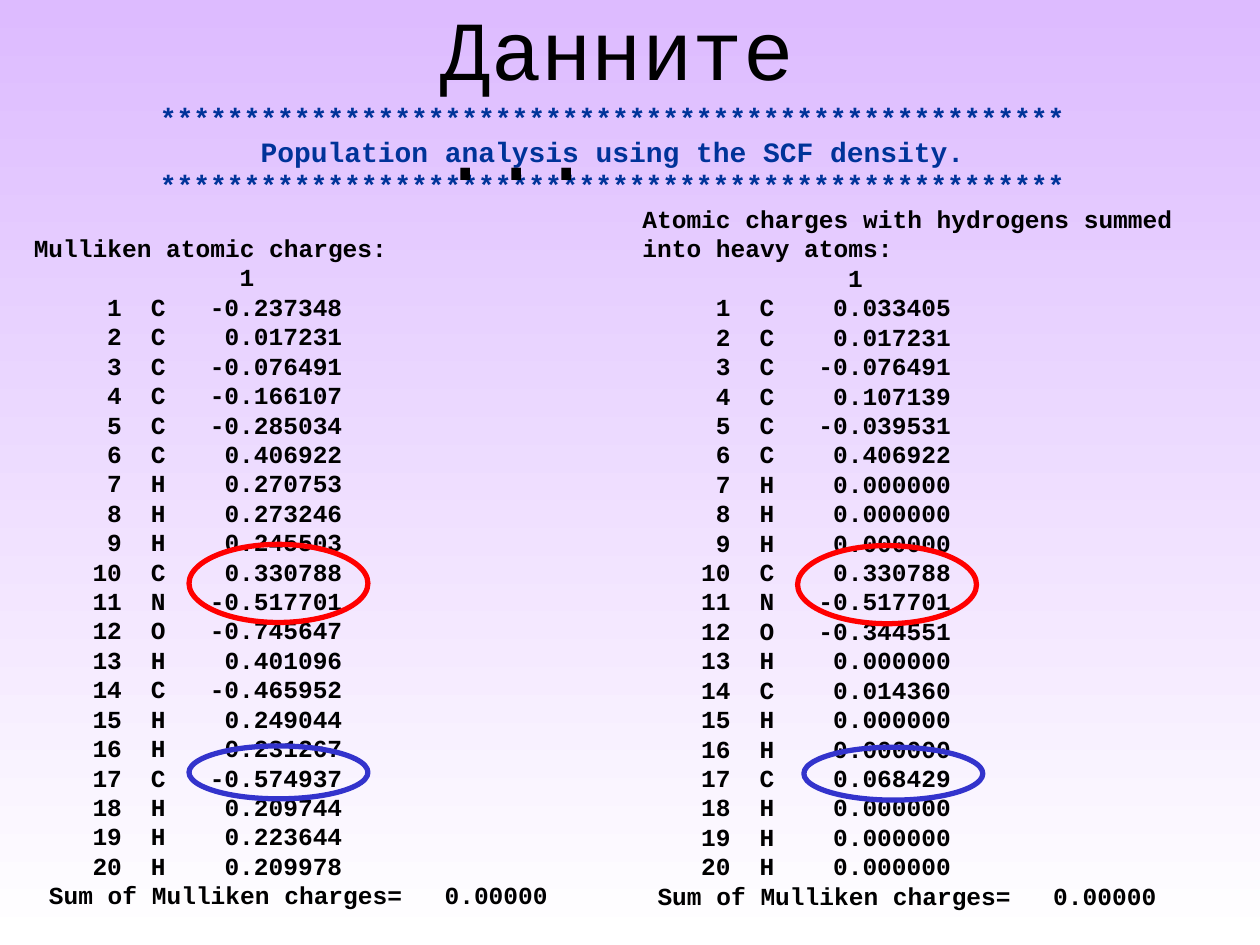
import pptx
import pptx.util
import pptx.dml.color
import pptx.enum.shapes
import pptx.enum.text
import lxml.etree
from pptx.util import Inches, Pt

COLORS = {"top": "DDBBFF", "bottom": "FFFFFF", "heading": "003399",
          "text": "000000", "red": "FF0000", "blue": "3333CC"}
FONT = "Courier New"
LINE_SPACING = 1.2

# Tab stops (alignment, inches) for each kind of output line
HEADING_TABS = [("l", 0.8)]
COLUMN_TABS = [("r", 1.75)]
ATOM_TABS = [("r", 0.7), ("l", 0.93), ("r", 2.45)]
SUM_TABS = [("l", 0.12), ("r", 4.08)]

ATOMS = "CCCCCCHHHCNOHCHHCHHH"
MULLIKEN = """-0.237348 0.017231 -0.076491 -0.166107 -0.285034 0.406922 0.270753
    0.273246 0.245503 0.330788 -0.517701 -0.745647 0.401096 -0.465952 0.249044
    0.231267 -0.574937 0.209744 0.223644 0.209978""".split()
SUMMED = """0.033405 0.017231 -0.076491 0.107139 -0.039531 0.406922 0.000000
    0.000000 0.000000 0.330788 -0.517701 -0.344551 0.000000 0.014360 0.000000
    0.000000 0.068429 0.000000 0.000000 0.000000""".split()


def rgb(name):
    return pptx.dml.color.RGBColor.from_string(COLORS[name])


class SlideBuilder:
    def __init__(self, prs):
        self.s = prs.slides.add_slide(prs.slide_layouts[6])

    def background(self, top, bottom):
        fill = self.s.background.fill
        fill.gradient()
        fill.gradient_angle = 270
        for stop, name, position in zip(fill.gradient_stops, (top, bottom), (0, 1)):
            stop.color.rgb = rgb(name)
            stop.position = position

    def text(self, box, lines, size, color="text", bold=False):
        """Add a text box; lines holds (text, tab stops) pairs."""
        tf = self.s.shapes.add_textbox(*map(Inches, box)).text_frame
        tf.word_wrap = True
        tf.auto_size = pptx.enum.text.MSO_AUTO_SIZE.SHAPE_TO_FIT_TEXT
        for i, (text, tabs) in enumerate(lines):
            p = tf.add_paragraph() if i else tf.paragraphs[0]
            p.text = text
            p.line_spacing = Pt(size * LINE_SPACING)
            self.tab_stops(p, tabs)
            for r in p.runs:
                r.font.name = FONT
                r.font.size = Pt(size)
                r.font.bold = bold
                r.font.color.rgb = rgb(color)

    def tab_stops(self, p, tabs):
        if not tabs:
            return
        ns = pptx.oxml.ns.qn
        tab_list = lxml.etree.SubElement(p._p.get_or_add_pPr(), ns("a:tabLst"))
        for align, position in tabs:
            lxml.etree.SubElement(tab_list, ns("a:tab"),
                                  pos=str(Inches(position)), algn=align)

    def charges(self, box, title, values):
        lines = [(title, []), ("\t1", COLUMN_TABS)]
        lines += [(f"\t{n}\t{atom}\t{value}", ATOM_TABS)
                  for n, (atom, value) in enumerate(zip(ATOMS, values), 1)]
        lines.append(("\tSum of Mulliken charges=\t0.00000", SUM_TABS))
        self.text(box, lines, 14, bold=True)

    def ring(self, left, top, height, color):
        sp = self.s.shapes.add_shape(pptx.enum.shapes.MSO_SHAPE.OVAL, Inches(left),
                                     Inches(top), Inches(1.42), Inches(height))
        sp.shadow.inherit = False
        sp.fill.background()
        sp.line.color.rgb = rgb(color)
        sp.line.width = Pt(3)


def main():
    prs = pptx.Presentation()
    prs.slide_width, prs.slide_height = Inches(10), Inches(7.5)
    slide = SlideBuilder(prs)
    slide.background("top", "bottom")

    # Heading and title
    stars = ("*" * 54, [])
    heading = ("\tPopulation analysis using the SCF density.", HEADING_TABS)
    slide.text((1.17, 0.75, 7.58, 0.9), [stars, heading, stars], 16, "heading", True)
    slide.text((3.4, -0.08, 3.1, 0.9), [("Данните ...", [])], 48)

    # Charge listings
    slide.charges((0.17, 1.8, 5, 5.45), "Mulliken atomic charges:", MULLIKEN)
    slide.charges((5, 1.57, 4.58, 5.68),
                  "Atomic charges with hydrogens summed into heavy atoms:", SUMMED)

    # Rings around the compared charges
    for left, top, height, color in [(1.5, 4.32, 0.62, "red"), (6.33, 4.33, 0.62, "red"),
                                     (1.5, 5.92, 0.42, "blue"), (6.38, 5.93, 0.42, "blue")]:
        slide.ring(left, top, height, color)

    prs.save("out.pptx")


if __name__ == "__main__":
    main()
